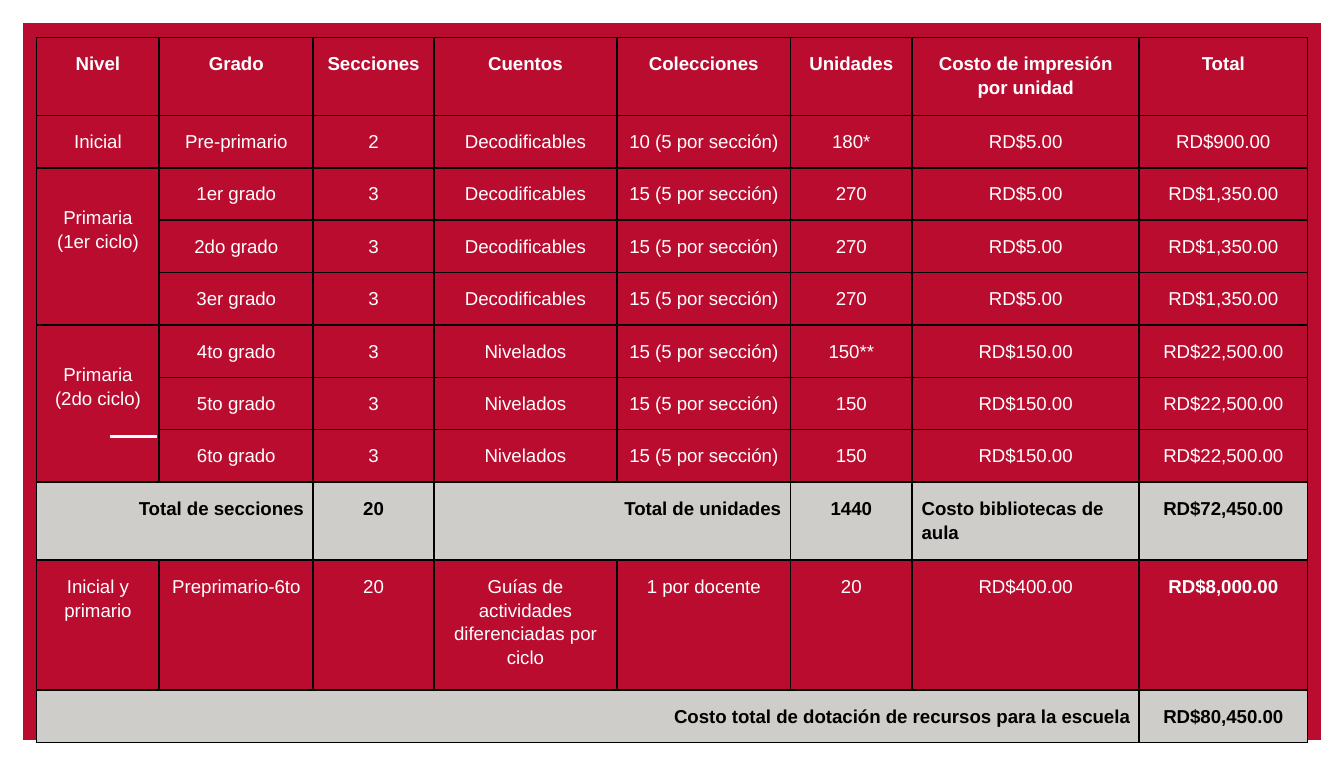
import pptx
import pptx.util
import pptx.dml.color
import pptx.enum.shapes
import pptx.enum.text
import pptx.oxml
import pptx.oxml.ns

Cm = pptx.util.Cm
Pt = pptx.util.Pt
ALIGN = pptx.enum.text.PP_ALIGN
COLORS = {"red": "BA0C2F", "white": "FFFFFF", "black": "000000", "gray": "CFCDC9"}
NS = pptx.oxml.ns.nsdecls("a")


def rgb(name):
    return pptx.dml.color.RGBColor.from_string(COLORS[name])


def set_text(tf, text, size=10, font="Arial", color="white", bold=False, align=ALIGN.CENTER):
    p = tf.paragraphs[0]
    p.alignment = align
    p.line_spacing = 1.15
    r = p.add_run()
    r.text = text
    r.font.size = Pt(size)
    r.font.name = font
    r.font.bold = bold
    r.font.color.rgb = rgb(color)


class Deck:
    def __init__(self, width, height):
        self.prs = pptx.Presentation()
        self.prs.slide_width = Cm(width)
        self.prs.slide_height = Cm(height)
        self.s = self.prs.slides.add_slide(self.prs.slide_layouts[6])

    def background(self, color):
        self.s.background.fill.solid()
        self.s.background.fill.fore_color.rgb = rgb(color)

    def frame(self, x, y, w, h, thickness, color):
        sp = self.s.shapes.add_shape(
            pptx.enum.shapes.MSO_SHAPE.FRAME, Cm(x), Cm(y), Cm(w), Cm(h))
        sp.adjustments[0] = thickness
        sp.shadow.inherit = False
        sp.fill.solid()
        sp.fill.fore_color.rgb = rgb(color)
        sp.line.fill.background()

    def line(self, x1, y1, x2, y2, color, width):
        sp = self.s.shapes.add_connector(
            pptx.enum.shapes.MSO_CONNECTOR.STRAIGHT, Cm(x1), Cm(y1), Cm(x2), Cm(y2))
        sp.line.color.rgb = rgb(color)
        sp.line.width = Pt(width)
        sp._element.spPr.append(pptx.oxml.parse_xml(f"<a:effectLst {NS}/>"))

    def table(self, x, y, widths, heights):
        table = self.s.shapes.add_table(
            len(heights), len(widths), Cm(x), Cm(y), Cm(sum(widths)), Cm(sum(heights))).table
        table.first_row = table.horz_banding = False
        for column, width in zip(table.columns, widths):
            column.width = Cm(width)
        for row, height in zip(table.rows, heights):
            row.height = Cm(height)
        for cell in table.iter_cells():
            self.borders(cell, "black", 1)
            cell.fill.background()
        return table

    def borders(self, cell, color, width):
        tcPr = cell._tc.get_or_add_tcPr()
        for side in "LRTB":
            tcPr.append(pptx.oxml.parse_xml(
                f'<a:ln{side} {NS} w="{Pt(width)}"><a:solidFill>'
                f'<a:srgbClr val="{COLORS[color]}"/></a:solidFill></a:ln{side}>'))

    def cell(self, cell, text, fill=None, top=0.25, **style):
        cell.margin_left = cell.margin_right = Cm(0.18)
        cell.margin_top, cell.margin_bottom = Cm(top), Cm(0.25)
        if fill:
            cell.fill.solid()
            cell.fill.fore_color.rgb = rgb(fill)
        set_text(cell.text_frame, text, **style)


def grade_row(level, grade, stories, units, cost, total):
    return [level, grade, "3", stories, "15 (5 por sección)", units, cost, total]


def main():
    first = ("Decodificables", "270", "RD$5.00", "RD$1,350.00")
    second = ("Nivelados", "150", "RD$150.00", "RD$22,500.00")
    rows = [
        ["Nivel", "Grado", "Secciones", "Cuentos", "Colecciones", "Unidades",
         "Costo de impresión por unidad", "Total"],
        ["Inicial", "Pre-primario", "2", "Decodificables", "10 (5 por sección)", "180*",
         "RD$5.00", "RD$900.00"],
        grade_row("Primaria (1er ciclo)", "1er grado", *first),
        grade_row(None, "2do grado", *first),
        grade_row(None, "3er grado", *first),
        grade_row("Primaria (2do ciclo)", "4to grado", "Nivelados", "150**", *second[2:]),
        grade_row(None, "5to grado", *second),
        grade_row(None, "6to grado", *second),
        ["Total de secciones", None, "20", "Total de unidades", None, "1440",
         "Costo bibliotecas de aula", "RD$72,450.00"],
        ["Inicial y primario", "Preprimario-6to", "20",
         "Guías de actividades diferenciadas por ciclo", "1 por docente", "20",
         "RD$400.00", "RD$8,000.00"],
        ["Costo total de dotación de recursos para la escuela"] + [None] * 6 + ["RD$80,450.00"],
    ]
    header, subtotal, guides, grand_total = 0, 8, 9, 10
    merges = {(2, 0): (4, 0), (5, 0): (7, 0), (8, 0): (8, 1), (8, 3): (8, 4), (10, 0): (10, 6)}
    aligns = {(8, 0): ALIGN.RIGHT, (8, 3): ALIGN.RIGHT, (8, 6): ALIGN.LEFT, (10, 0): ALIGN.RIGHT}

    deck = Deck(25.4, 14.4)
    deck.background("red")
    deck.frame(0, 0, 25.4, 14.42, 0.03, "white")
    deck.line(2.08, 8.25, 2.97, 8.25, "white", 1.5)

    widths = [2.32, 2.91, 2.28, 3.46, 3.28, 2.3, 4.29, 3.18]
    heights = [1.47] + [0.99] * 7 + [1.47, 2.46, 0.99]
    table = deck.table(0.69, 0.71, widths, heights)
    for start, end in merges.items():
        table.cell(*start).merge(table.cell(*end))
    for i, row in enumerate(rows):
        summary = i in (subtotal, grand_total)
        for j, text in enumerate(row):
            if text is None:
                continue
            deck.cell(
                table.cell(i, j), text,
                fill="gray" if summary else None,
                color="black" if summary else "white",
                bold=summary or i == header or (i, j) == (guides, 7),
                align=aligns.get((i, j), ALIGN.CENTER),
                top=0.7 if text.startswith("Primaria") else 0.25)
    deck.prs.save("out.pptx")


if __name__ == "__main__":
    main()
